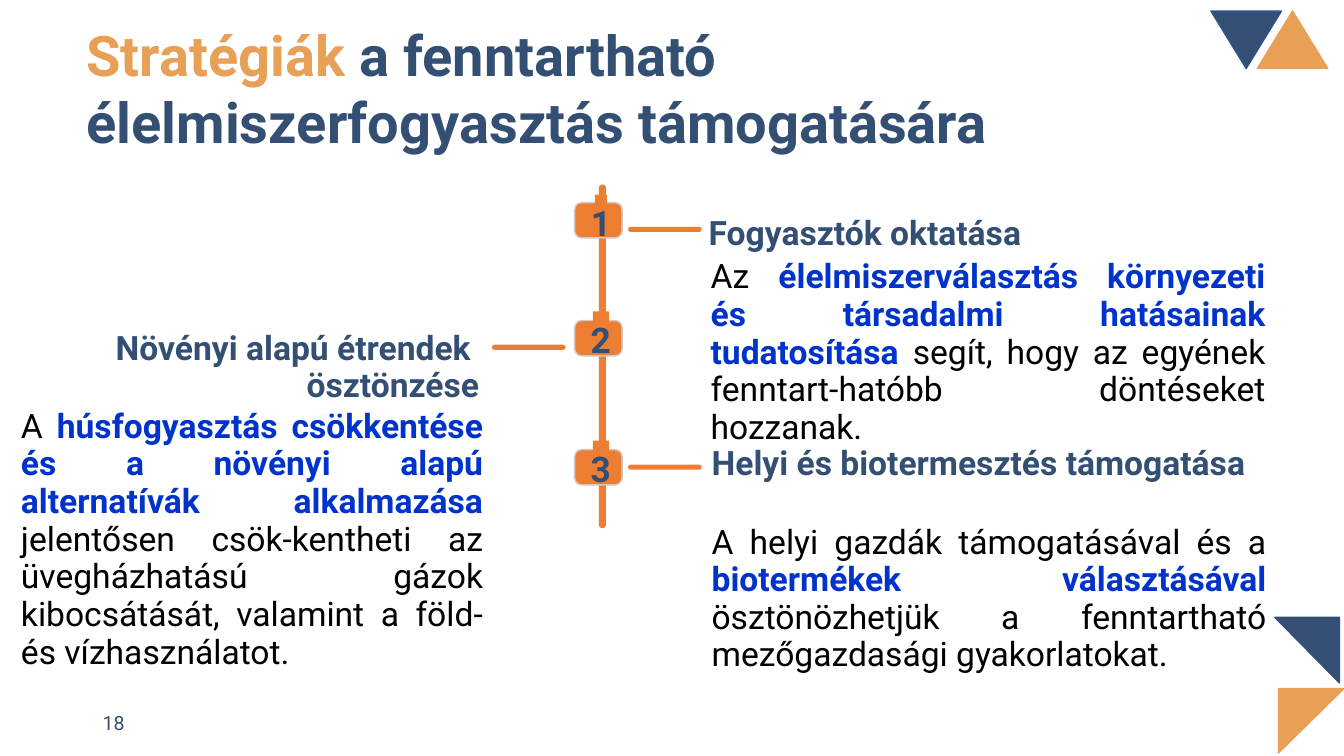
from dataclasses import dataclass

from pptx import Presentation
from pptx import util as u
from pptx.dml.color import RGBColor
from pptx.enum import shapes, text

PX = 9144


@dataclass(frozen=True)
class Theme:
    font: str = "Roboto"
    navy: str = "344F74"
    deep_navy: str = "354F74"
    navy_edge: str = "31538F"
    sand: str = "E89F56"
    orange: str = "ED7D31"
    badge_edge: str = "D7C5C1"
    blue: str = "0033CC"
    black: str = "000000"
    title: float = 40
    number: float = 25.2
    body: float = 24
    page: float = 14


T = Theme()
ALIGN = text.PP_ALIGN
SHAPE = shapes.MSO_SHAPE
HEADING = {"line_spacing": u.Pt(26.3)}
BODY = {"line_spacing": u.Pt(26.9), "alignment": ALIGN.JUSTIFY}
NUMBER = {"line_spacing": u.Pt(31.5), "alignment": ALIGN.CENTER}


def set_all(target, values):
    for name, value in values.items():
        setattr(target, name, value)


def emu(box):
    return [u.Emu(v * PX) for v in box]


def write(sp, paragraphs, size, fmt, wrap=True, anchor=text.MSO_ANCHOR.TOP):
    tf = sp.text_frame
    set_all(tf, {"word_wrap": wrap, "vertical_anchor": anchor})
    for i, runs in enumerate(paragraphs):
        p = tf.add_paragraph() if i else tf.paragraphs[0]
        set_all(p, fmt)
        for words, color, bold in runs:
            r = p.add_run()
            r.text = words
            set_all(r.font, {"name": T.font, "size": u.Pt(size), "bold": bold})
            r.font.color.rgb = RGBColor.from_string(color)


def add_text(s, box, paragraphs, size, fmt, **frame):
    write(s.shapes.add_textbox(*emu(box)), paragraphs, size, fmt, **frame)


def add_heading(s, box, lines, **fmt):
    add_text(s, box, [[(line, T.navy, True)] for line in lines], T.body, HEADING | fmt)


def add_body(s, box, before, key, after):
    runs = [(before, T.black, False), (key, T.blue, True), (after, T.black, False)]
    add_text(s, box, [runs], T.body, BODY)


def add_filled(s, kind, box, fill, edge=None, width=1, adj=None, rotation=0):
    sp = s.shapes.add_shape(kind, *emu(box))
    sp.shadow.inherit = False
    sp.rotation = rotation
    sp.fill.solid()
    sp.fill.fore_color.rgb = RGBColor.from_string(fill)
    if edge:
        sp.line.color.rgb = RGBColor.from_string(edge)
        sp.line.width = u.Pt(width)
    else:
        sp.line.fill.background()
    if adj is not None:
        sp.adjustments[0] = adj
    return sp


def add_bar(s, box):
    add_filled(s, SHAPE.ROUNDED_RECTANGLE, box, T.orange, adj=0.5)


def add_step(s, number, top, bar_left, bar_top, stem):
    add_bar(s, (bar_left, bar_top, 73, 5))
    add_filled(s, SHAPE.ROUNDED_RECTANGLE, (570, top, 47, 35), T.orange,
               T.badge_edge, 1.05, 0.2)
    left, stem_top, width = stem
    sp = add_filled(s, SHAPE.RECTANGLE, (left, stem_top, width, 29), T.orange)
    write(sp, [[(number, T.navy, True)]], T.number, NUMBER, wrap=False)


def add_corners(s):
    for box, fill, edge, adj, rotation in (
        ((1247, 11, 70, 57), T.sand, T.sand, 0.5, 0),
        ((1268, 683, 65, 64), T.sand, T.sand, 1, 180),
        ((1264, 613, 65, 64), T.deep_navy, T.deep_navy, 1, 270),
        ((1201, 11, 70, 57), T.deep_navy, T.navy_edge, 0.5, 180),
    ):
        add_filled(s, SHAPE.ISOSCELES_TRIANGLE, box, fill, edge, adj=adj, rotation=rotation)


def main():
    prs = Presentation()
    set_all(prs, {"slide_width": u.Emu(1333 * PX), "slide_height": u.Emu(750 * PX)})
    s = prs.slides.add_slide(prs.slide_layouts[6])

    add_text(s, (92, 697, 300, 40), [[("18", T.deep_navy, False)]], T.page, {},
             anchor=text.MSO_ANCHOR.MIDDLE)
    add_corners(s)
    title = [("Stratégiák ", T.sand, True),
             ("a fenntartható élelmiszerfogyasztás támogatására", T.navy, True)]
    add_text(s, (76, 15, 1072, 97), [title], T.title, {})

    add_bar(s, (594, 183, 7, 341))
    add_step(s, "1", 201, 623, 225, (590, 193, 12))
    add_step(s, "2", 318, 488, 342, (588, 309, 16))
    add_step(s, "3", 446, 623, 461, (588, 437, 16))

    add_heading(s, (693, 209, 399, 41), ["Fogyasztók oktatása"])
    add_body(s, (695, 251, 570, 163), "Az ",
             "élelmiszerválasztás környezeti és társadalmi hatásainak tudatosítása ",
             "segít, hogy az egyének fenntart-hatóbb döntéseket hozzanak.")

    add_heading(s, (96, 323, 389, 52), ["Növényi alapú étrendek ", "ösztönzése"],
                alignment=ALIGN.RIGHT)
    add_body(s, (11, 399, 478, 124), "A ",
             "húsfogyasztás csökkentése és a növényi alapú alternatívák alkalmazása ",
             "jelentősen csök-kentheti az üvegházhatású gázok kibocsátását, "
             "valamint a föld- és vízhasználatot.")

    add_heading(s, (696, 437, 581, 49), ["Helyi és biotermesztés támogatása"])
    add_body(s, (696, 514, 570, 124), "A helyi gazdák támogatásával és a ",
             "biotermékek választásával ",
             "ösztönözhetjük a fenntartható mezőgazdasági gyakorlatokat.")

    prs.save("out.pptx")


if __name__ == "__main__":
    main()
